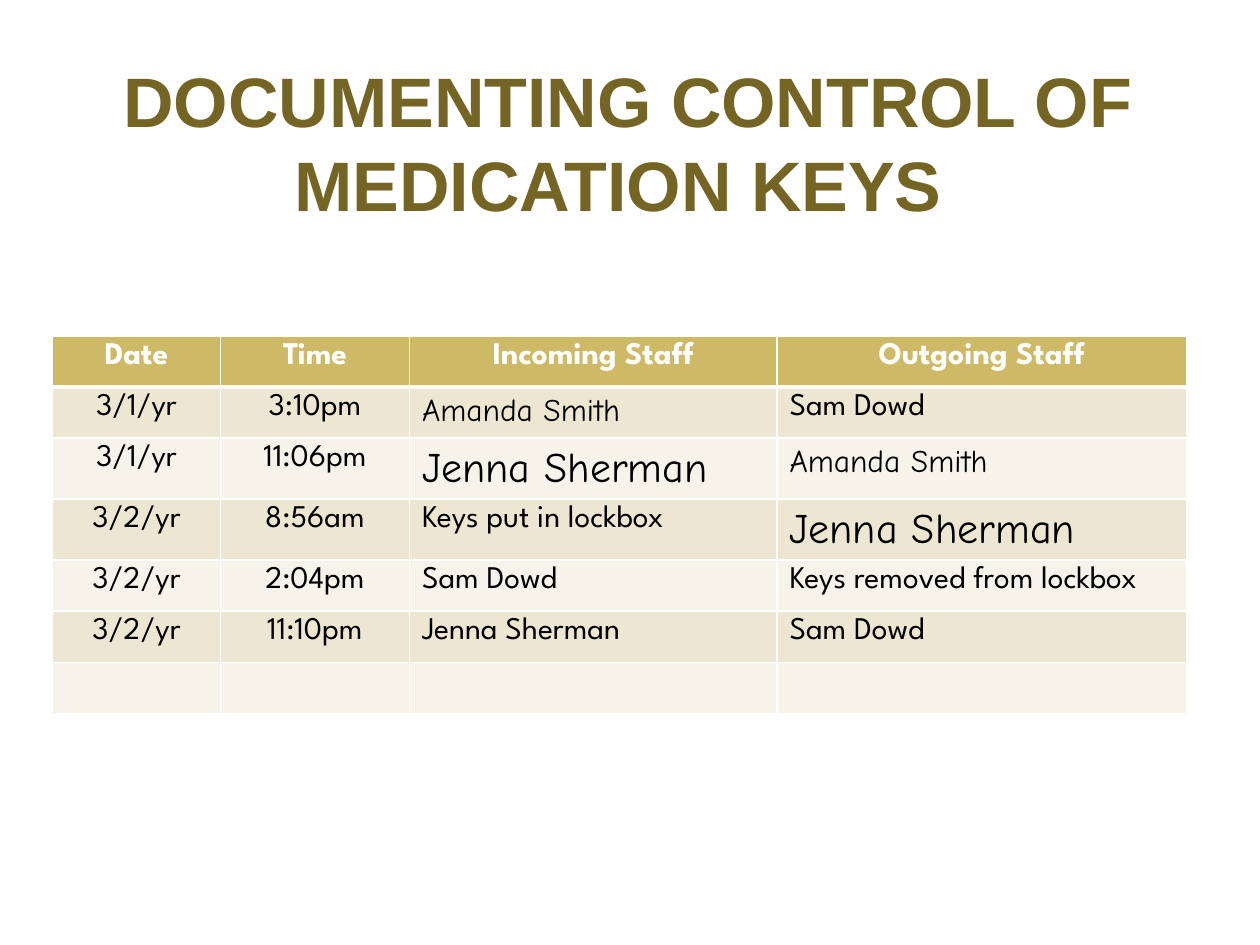
from lxml import etree
from pptx import Presentation
from pptx.dml.color import RGBColor
from pptx.enum.shapes import MSO_SHAPE
from pptx.enum.text import MSO_ANCHOR, MSO_AUTO_SIZE, PP_ALIGN
from pptx.oxml.ns import qn
from pptx.util import Pt

CENTER, LEFT = PP_ALIGN.CENTER, PP_ALIGN.LEFT
MIDDLE = MSO_ANCHOR.MIDDLE
NO_AUTOFIT = MSO_AUTO_SIZE.NONE
RECTANGLE, ROUNDED_RECTANGLE = MSO_SHAPE.RECTANGLE, MSO_SHAPE.ROUNDED_RECTANGLE

WHITE = RGBColor(0xFF, 0xFF, 0xFF)
BLACK = RGBColor(0x00, 0x00, 0x00)
OLIVE = RGBColor(0x75, 0x65, 0x25)
GOLD = RGBColor(0xCE, 0xB9, 0x66)
SAND = RGBColor(0xED, 0xE6, 0xD3)
CREAM = RGBColor(0xF6, 0xF3, 0xEA)

TITLE_FONT = {"name": "Arial", "size": Pt(40), "bold": True}
HEADER_FONT = {"name": "League Spartan", "size": Pt(18), "bold": True}
PRINTED_FONT = {"name": "League Spartan", "size": Pt(18), "bold": False}
SIGNATURE_FONT = {"name": "Comic Neue", "size": Pt(18), "bold": False}
LARGE_SIGNATURE_FONT = {"name": "Comic Neue", "size": Pt(24), "bold": False}

PANELS = [
    (ROUNDED_RECTANGLE, 7.2, 7.8, 705.6, 525, 100),
    (RECTANGLE, 21.6, 21.6, 676.8, 104.4, 83),
    (RECTANGLE, 29.5, 29.5, 660.5, 88, 100),
]
ROWS = [
    ["Date", "Time", "Incoming Staff", "Outgoing Staff"],
    ["3/1/yr", "3:10pm", "Amanda Smith", "Sam Dowd"],
    ["3/1/yr", "11:06pm", "Jenna Sherman", "Amanda Smith"],
    ["3/2/yr", "8:56am", "Keys put in lockbox", "Jenna Sherman"],
    ["3/2/yr", "2:04pm", "Sam Dowd", "Keys removed from lockbox"],
    ["3/2/yr", "11:10pm", "Jenna Sherman", "Sam Dowd"],
    ["", "", "", ""],
]
SIGNATURES = {
    (1, 2): SIGNATURE_FONT,
    (2, 2): LARGE_SIGNATURE_FONT,
    (2, 3): SIGNATURE_FONT,
    (3, 3): LARGE_SIGNATURE_FONT,
}
COLUMN_WIDTHS = [96, 108, 210, 234]
ROW_HEIGHT = 29.2


def format_text(paragraph, text, font_values, color, alignment):
    paragraph.text = text
    paragraph.alignment = alignment
    for font in [paragraph.font, *(run.font for run in paragraph.runs)]:
        for name, value in font_values.items():
            setattr(font, name, value)
        font.color.rgb = color


def add_borders(cell, widths):
    properties = cell._tc.get_or_add_tcPr()
    for position, (side, width) in enumerate(widths.items()):
        line = etree.Element(qn(f"a:{side}"), w=str(Pt(width)))
        fill = etree.SubElement(line, qn("a:solidFill"))
        etree.SubElement(fill, qn("a:srgbClr"), val=str(WHITE))
        properties.insert(position, line)


presentation = Presentation()
presentation.slide_width = Pt(720)
presentation.slide_height = Pt(540)
slide = presentation.slides.add_slide(presentation.slide_layouts[5])
title = slide.shapes.title

for preset, left, top, width, height, opacity in PANELS:
    panel = slide.shapes.add_shape(preset, Pt(left), Pt(top), Pt(width), Pt(height))
    panel.shadow.inherit = False
    panel.fill.solid()
    panel.fill.fore_color.rgb = WHITE
    panel.line.fill.background()
    if preset == ROUNDED_RECTANGLE:
        panel.adjustments[0] = 0.02
    if opacity < 100:
        panel_color = panel._element.spPr.find(qn("a:solidFill")).find(qn("a:srgbClr"))
        etree.SubElement(panel_color, qn("a:alpha"), val=str(opacity * 1000))
    title._element.addprevious(panel._element)

title.left, title.top, title.width, title.height = Pt(33.8), Pt(24), Pt(650), Pt(113.8)
title.text_frame.word_wrap = True
title.text_frame.auto_size = NO_AUTOFIT
title.text_frame.vertical_anchor = MIDDLE
title_paragraph = title.text_frame.paragraphs[0]
format_text(title_paragraph, "DOCUMENTING CONTROL OF MEDICATION KEYS ", TITLE_FONT, OLIVE, CENTER)
title_paragraph.line_spacing = Pt(48)

table = slide.shapes.add_table(
    len(ROWS), len(COLUMN_WIDTHS), Pt(30), Pt(192),
    Pt(sum(COLUMN_WIDTHS)), Pt(ROW_HEIGHT * len(ROWS)),
).table
for column, width in zip(table.columns, COLUMN_WIDTHS):
    column.width = Pt(width)

for row_index, texts in enumerate(ROWS):
    table.rows[row_index].height = Pt(ROW_HEIGHT)
    is_header = row_index == 0
    row_fill = GOLD if is_header else (CREAM, SAND)[row_index % 2]
    row_font = HEADER_FONT if is_header else PRINTED_FONT
    borders = {"lnL": 1, "lnR": 1, "lnT": 3 if row_index == 1 else 1, "lnB": 3 if is_header else 1}
    for column_index, text in enumerate(texts):
        cell = table.cell(row_index, column_index)
        cell.fill.solid()
        cell.fill.fore_color.rgb = row_fill
        add_borders(cell, borders)
        format_text(
            cell.text_frame.paragraphs[0],
            text,
            SIGNATURES.get((row_index, column_index), row_font),
            WHITE if is_header else BLACK,
            CENTER if is_header or column_index < 2 else LEFT,
        )

presentation.save("out.pptx")
